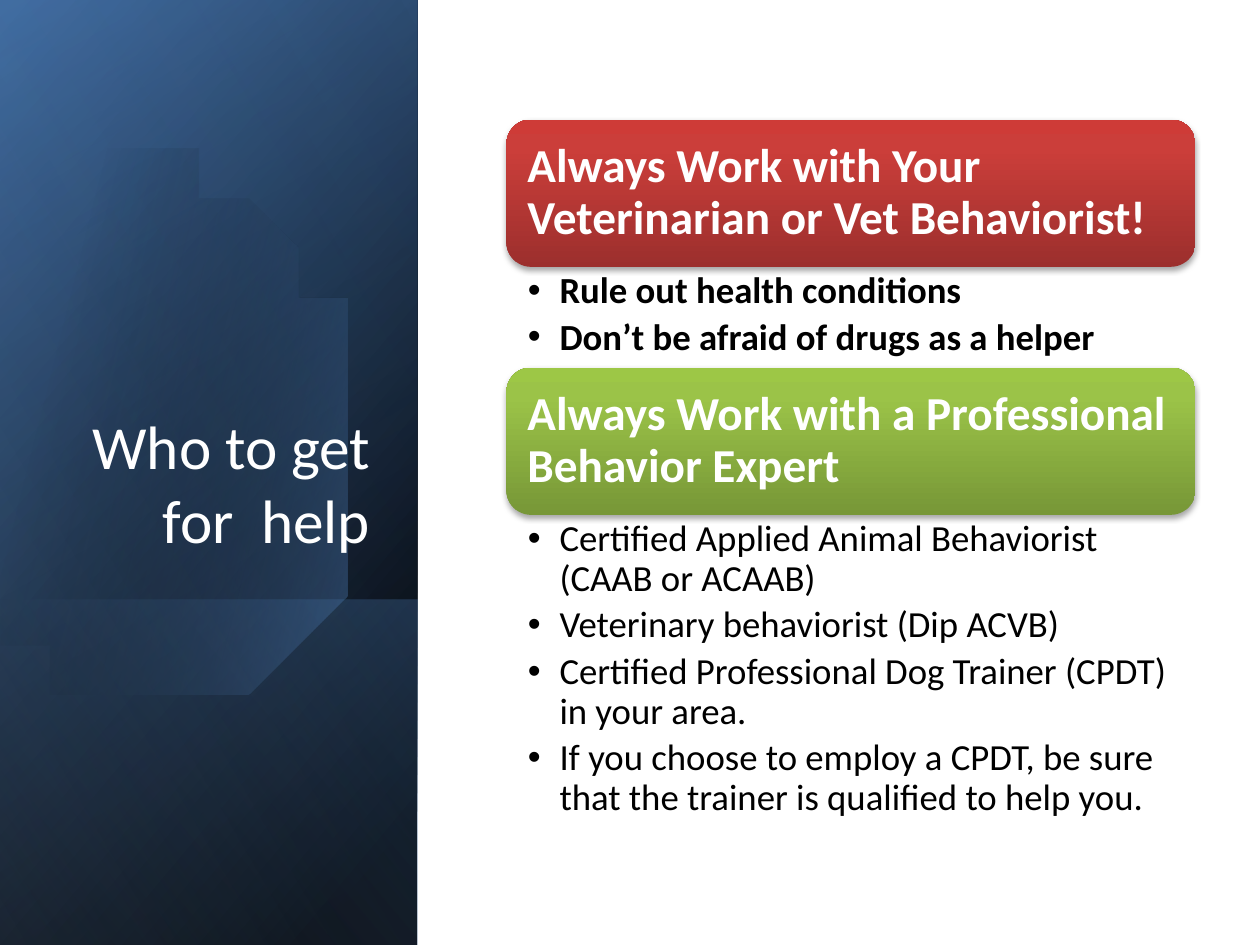
from lxml import etree
from pptx import Presentation, util as u
from pptx.dml import color
from pptx.enum import shapes, text
from pptx.oxml import ns

SIDEBAR_WIDTH = 8.41
PAGE_WIDTH, PAGE_HEIGHT = 25.4, 19.05
PANEL_LEFT, PANEL_TOP, PANEL_WIDTH, HEADER_HEIGHT = 10.21, 2.41, 13.89, 2.97

# Gradient stops: position in percent, colour, opacity in percent
SIDEBARS = [
    (PAGE_HEIGHT, [(8, "000000", 100), (100, "376092", 100)], 50),
    (PAGE_HEIGHT, [(0, "000000", 0), (99, "4F81BD", 46)], 30),
    (6.96, [(2, "4F81BD", 29), (100, "000000", 30)], 130),
]
SIDEBAR_SHEEN = (PAGE_HEIGHT, [(0, "000000", 0), (99, "95B3D7", 11)], 120)
EGG_STOPS = [(29, "000000", 0), (100, "4F81BD", 43)]
EGG_START = (2.44, 2.9)
# Six numbers make a curve, two make a straight line
EGG_PATH = [
    (4.34, 3.1, 6.2, 4.88, 6.93, 7.37),
    (7.8, 10.46, 6.65, 13.49, 4.34, 14.15),
    (2.9, 14.58, 1.35, 13.97, 0.18, 12.7),
    (-0.08, 12.4),
    (-0.64, 4.22),
    (-0.38, 3.91),
    (0.05, 3.48, 0.56, 3.18, 1.14, 3.0),
    (1.57, 2.87, 2.01, 2.84, 2.44, 2.9),
]
PANELS = [
    ("Always Work with Your Veterinarian or Vet Behaviorist!",
     ("9C2F2D", "CB3E3A", "CE3B37"), 2.03, True,
     ["Rule out health conditions", "Don’t be afraid of drugs as a helper"]),
    ("Always Work with a Professional Behavior Expert",
     ("779737", "9BC348", "9DC746"), 6.53, False,
     ["Certified Applied Animal Behaviorist (CAAB or ACAAB)",
      "Veterinary behaviorist (Dip ACVB)",
      "Certified Professional Dog Trainer (CPDT) in your area.",
      "If you choose to employ a CPDT, be sure that the trainer is qualified to help you."]),
]


def rgb(value):
    return color.RGBColor.from_string(value)


def set_all(target, values):
    for name, value in values.items():
        setattr(target, name, value)


def add_node(parent, tag, **attributes):
    """Append a DrawingML element with the given attributes."""
    values = {name: str(value) for name, value in attributes.items()}
    return etree.SubElement(parent, ns.qn(f"a:{tag}"), values)


def add_colour(parent, value, opacity):
    node = add_node(parent, "srgbClr", val=value)
    if opacity < 100:
        add_node(node, "alpha", val=opacity * 1000)


def curve_points(start, curve, steps=24):
    """Points along a cubic Bezier curve, without its start."""
    x1, y1, x2, y2, x3, y3 = curve
    points = []
    for step in range(1, steps + 1):
        t = step / steps
        weights = ((1 - t) ** 3, 3 * t * (1 - t) ** 2, 3 * t * t * (1 - t), t ** 3)
        points.append(tuple(
            sum(w * v for w, v in zip(weights, axis))
            for axis in ((start[0], x1, x2, x3), (start[1], y1, y2, y3))))
    return points


class SlideBuilder:
    def __init__(self, page, font="Calibri"):
        self.page = page
        self.font = font

    def paint(self, shape, stops, angle):
        """Give a shape a linear gradient, no outline and no shadow."""
        shape.shadow.inherit = False
        shape.line.fill.background()
        shape.fill.gradient()
        gradient = shape._element.spPr.find(ns.qn("a:gradFill"))
        for child in list(gradient):
            gradient.remove(child)
        gradient.set("rotWithShape", "1")
        stop_list = add_node(gradient, "gsLst")
        for position, value, opacity in stops:
            add_colour(add_node(stop_list, "gs", pos=position * 1000), value, opacity)
        add_node(gradient, "lin", ang=angle * 60000, scaled=0)

    def sidebar(self, height, stops, angle):
        """Add a turned, mirrored rectangle that ends at the lower left corner."""
        left = (SIDEBAR_WIDTH - height) / 2
        top = PAGE_HEIGHT - (height + SIDEBAR_WIDTH) / 2
        shape = self.page.shapes.add_shape(
            shapes.MSO_SHAPE.RECTANGLE, u.Cm(left), u.Cm(top), u.Cm(height), u.Cm(SIDEBAR_WIDTH))
        shape.rotation = 90
        shape._element.spPr.xfrm.set("flipH", "1")
        self.paint(shape, stops, angle)

    def egg(self):
        points = [EGG_START]
        for part in EGG_PATH:
            points += curve_points(points[-1], part) if len(part) == 6 else [part]
        builder = self.page.shapes.build_freeform(*EGG_START, scale=u.Cm(1))
        builder.add_line_segments(points[1:], close=True)
        self.paint(builder.convert_to_shape(), EGG_STOPS, 14)

    def set_text(self, shape, lines, frame_format, para_format, font_format, colour, bullet=False):
        frame = shape.text_frame
        set_all(frame, {"word_wrap": True, **frame_format})
        for index, line in enumerate(lines):
            para = frame.add_paragraph() if index else frame.paragraphs[0]
            if bullet:
                props = para._p.get_or_add_pPr()
                props.set("marL", str(u.Cm(0.64)))
                props.set("indent", str(-u.Cm(0.64)))
                add_node(props, "buFont", typeface="Arial")
                add_node(props, "buChar", char="•")
            set_all(para, para_format)
            span = para.add_run()
            span.text = line
            set_all(span.font, {"name": self.font, **font_format})
            span.font.color.rgb = rgb(colour)

    def text_box(self, left, top, width, height, *content, **options):
        box = self.page.shapes.add_textbox(u.Cm(left), u.Cm(top), u.Cm(width), u.Cm(height))
        self.set_text(box, *content, **options)

    def title(self, words):
        self.text_box(1.22, 4.67, 6.5, 6.65, [words],
                      {"vertical_anchor": text.MSO_ANCHOR.BOTTOM},
                      {"alignment": text.PP_ALIGN.RIGHT}, {"size": u.Pt(35)}, "FFFFFF")

    def header(self, top, words, colours):
        shape = self.page.shapes.add_shape(
            shapes.MSO_SHAPE.ROUNDED_RECTANGLE, u.Cm(PANEL_LEFT), u.Cm(top),
            u.Cm(PANEL_WIDTH), u.Cm(HEADER_HEIGHT))
        self.paint(shape, [(at, value, 100) for at, value in zip((0, 80, 100), colours)], 270)
        effects = shape._element.spPr.find(ns.qn("a:effectLst"))
        shadow = add_node(effects, "outerShdw", blurRad=u.Pt(3.1), dist=u.Pt(1.8),
                          dir=90 * 60000, rotWithShape=0)
        add_colour(shadow, "000000", 35)
        margins = {f"margin_{side}": u.Cm(0.28) for side in ("left", "top", "right", "bottom")}
        self.set_text(shape, [words], {"vertical_anchor": text.MSO_ANCHOR.MIDDLE, **margins},
                      {"alignment": text.PP_ALIGN.LEFT, "line_spacing": 0.9},
                      {"size": u.Pt(27), "bold": True}, "FFFFFF")

    def bullets(self, top, height, lines, bold):
        margins = {"margin_left": u.Cm(0.43), "margin_top": u.Cm(0.1),
                   "margin_right": u.Cm(0.53), "margin_bottom": u.Cm(0.1)}
        self.text_box(PANEL_LEFT, top, PANEL_WIDTH, height, lines, margins,
                      {"line_spacing": 0.9, "space_after": u.Pt(4)},
                      {"size": u.Pt(21), "bold": bold}, "000000", bullet=True)


def main():
    deck = Presentation()
    deck.slide_width, deck.slide_height = u.Cm(PAGE_WIDTH), u.Cm(PAGE_HEIGHT)
    builder = SlideBuilder(deck.slides.add_slide(deck.slide_layouts[6]))

    for sidebar in SIDEBARS:
        builder.sidebar(*sidebar)
    builder.egg()
    builder.sidebar(*SIDEBAR_SHEEN)
    builder.title("Who to get for  help")

    top = PANEL_TOP
    for heading, colours, list_height, bold, lines in PANELS:
        builder.header(top, heading, colours)
        builder.bullets(top + HEADER_HEIGHT, list_height, lines, bold)
        top += HEADER_HEIGHT + list_height

    deck.save("out.pptx")


if __name__ == "__main__":
    main()
